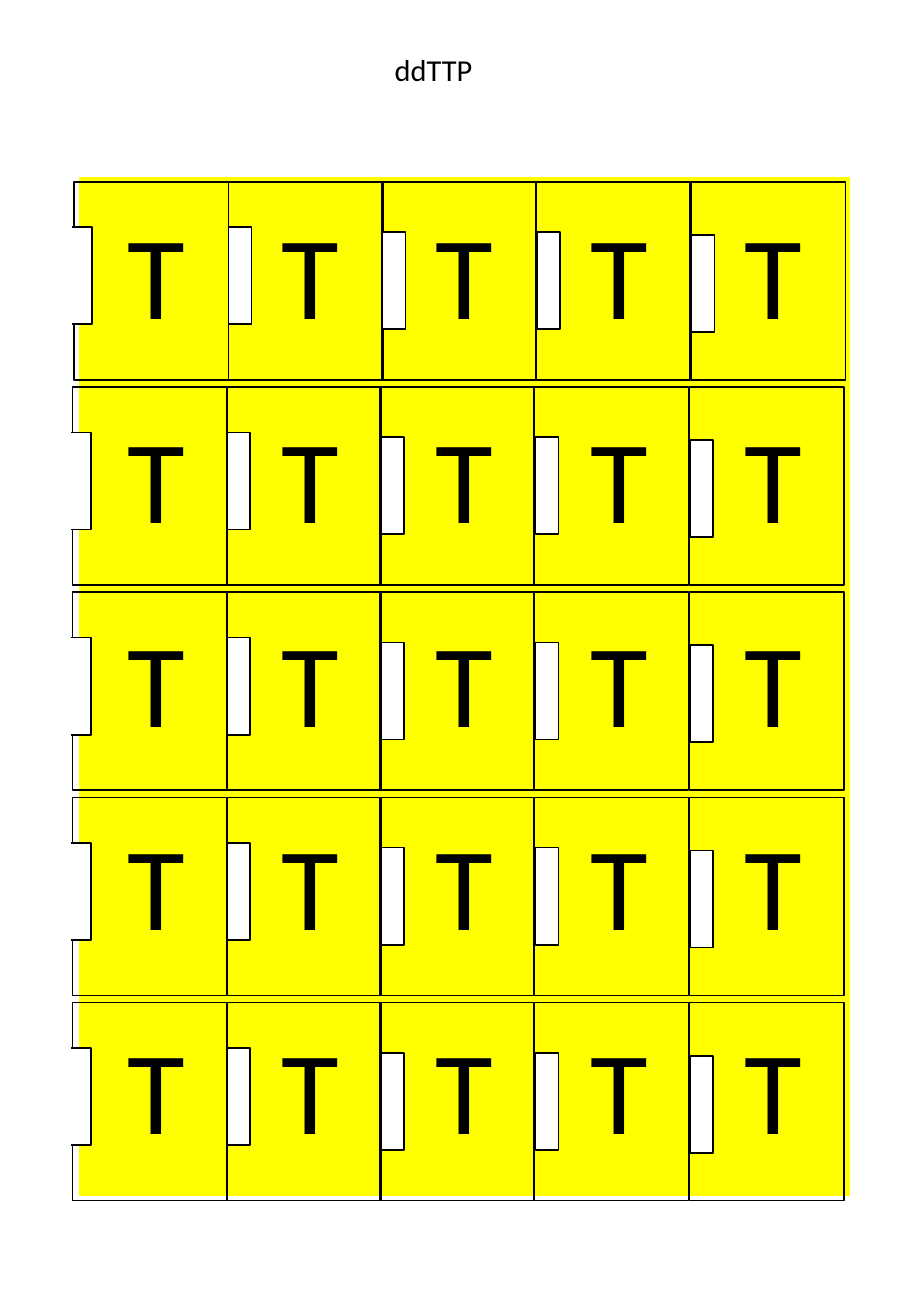
from dataclasses import dataclass

from pptx import Presentation
from pptx.dml.color import RGBColor
from pptx.enum.shapes import MSO_SHAPE
from pptx.enum.text import MSO_ANCHOR, MSO_AUTO_SIZE, PP_ALIGN
from pptx.util import Cm, Pt

RECT = MSO_SHAPE.RECTANGLE
TOP, MIDDLE = MSO_ANCHOR.TOP, MSO_ANCHOR.MIDDLE
LEFT, CENTER = PP_ALIGN.LEFT, PP_ALIGN.CENTER
FIXED = MSO_AUTO_SIZE.NONE
PLAIN = "{2D5ABB26-0587-4C30-8999-92F81FD0307C}"  # no style, no grid
TITLE_ONLY = 5

# All lengths are in centimetres; card and slot places count from a row's corner.
COUNT = 5
ROW_TOP, ROW_STEP = 3.8, 4.29
CARD_LEFTS = (0, 3.23, 6.43, 9.65, 12.9)
CARD_SIZE = (3.23, 4.14)
SLOT_HIGH = 2.03
SLOTS = (  # left, top, width
    (-0.51, 0.95, 0.89),
    (3.23, 0.95, 0.48),
    (6.45, 1.05, 0.48),
    (9.68, 1.05, 0.48),
    (12.91, 1.11, 0.48),
)
MASK = (-0.87, 0.68, 0.81, 2.57)


@dataclass(frozen=True)
class Theme:
    font: str = "Calibri"
    ink: RGBColor = RGBColor(0, 0, 0)
    paper: RGBColor = RGBColor(255, 255, 255)
    base: RGBColor = RGBColor(255, 255, 0)
    title: Pt = Pt(18)
    letter: Pt = Pt(70)
    line: Pt = Pt(1)


class Sheet:
    def __init__(self, slide, theme):
        self.slide = slide
        self.theme = theme

    def label(self, frame, text, size, align):
        frame.text = text
        para = frame.paragraphs[0]
        para.alignment = align
        para.font.name = self.theme.font
        para.font.size = size
        para.font.color.rgb = self.theme.ink

    def title(self, text, left, top, width, height):
        shape = self.slide.shapes.title
        shape.left, shape.top = Cm(left), Cm(top)
        shape.width, shape.height = Cm(width), Cm(height)
        frame = shape.text_frame
        frame.auto_size = FIXED
        frame.word_wrap = True
        frame.vertical_anchor = TOP
        self.label(frame, text, self.theme.title, LEFT)

    def table(self, letter, left, top, width, height):
        frame = self.slide.shapes.add_table(
            COUNT, COUNT, Cm(left), Cm(top), Cm(width), Cm(height))
        table = frame.table
        table.first_row = table.horz_banding = False
        table._tbl.tblPr[0].text = PLAIN
        for cell in table.iter_cells():
            cell.fill.solid()
            cell.fill.fore_color.rgb = self.theme.base
            cell.vertical_anchor = MIDDLE
            self.label(cell.text_frame, letter, self.theme.letter, CENTER)

    def rect(self, group, left, top, width, height, fill=None, line=None):
        shape = group.shapes.add_shape(
            RECT, Cm(left), Cm(top), Cm(width), Cm(height))
        shape.shadow.inherit = False
        if fill is None:
            shape.fill.background()
        else:
            shape.fill.solid()
            shape.fill.fore_color.rgb = fill
        shape.line.color.rgb = self.theme.ink if line is None else line
        shape.line.width = self.theme.line

    def row(self, left, top):
        """Draw one row of cards with the slots at their left edges."""
        paper = self.theme.paper
        group = self.slide.shapes.add_group_shape()
        for x in CARD_LEFTS:
            self.rect(group, left + x, top, *CARD_SIZE)
        for x, y, width in SLOTS:
            self.rect(group, left + x, top + y, width, SLOT_HIGH, paper)
        x, y, width, height = MASK
        self.rect(group, left + x, top + y, width, height, paper, paper)


def main():
    deck = Presentation()
    deck.slide_width, deck.slide_height = Cm(19.05), Cm(27.51)
    slide = deck.slides.add_slide(deck.slide_layouts[TITLE_ONLY])
    sheet = Sheet(slide, Theme())
    sheet.title("ddTTP", 8, 0.94, 3.58, 1.04)
    sheet.table("T", 1.65, 3.71, 16.13, 21.29)
    for index in range(COUNT):
        left = 1.52 if index else 1.55
        sheet.row(left, ROW_TOP + index * ROW_STEP)
    deck.save("out.pptx")


if __name__ == "__main__":
    main()
